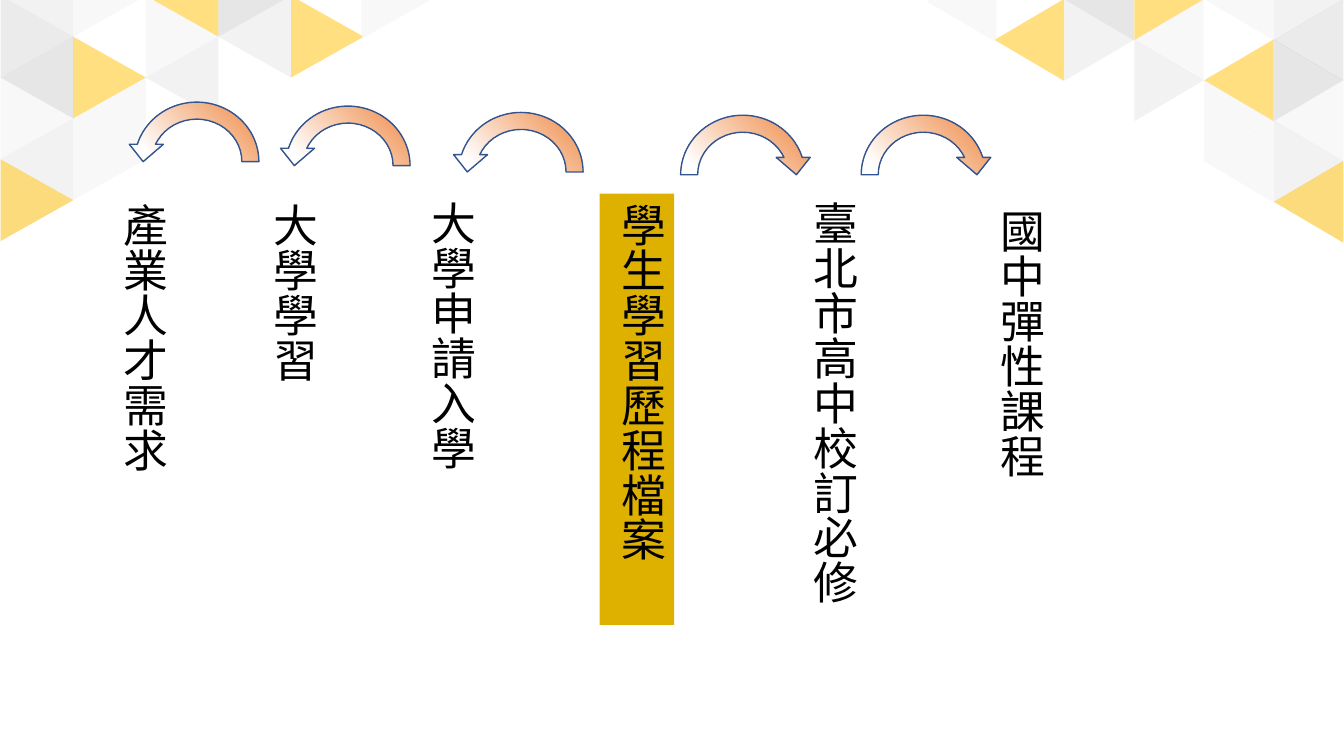
from lxml import etree
from pptx import Presentation
from pptx import util as u
from pptx.dml.color import RGBColor
from pptx.enum import shapes, text
from pptx.oxml import parse_xml
from pptx.oxml.ns import qn

Cm = u.Cm
FONT = "Noto Sans CJK SC"
NS = "http://schemas.openxmlformats.org/drawingml/2006/main"

# Vertical labels: text, left, top, height (cm), fill
LABEL_WIDTH = 1.88
LABELS = [
    ("產業人才需求", 2.57, 4.88, 7.65, None),
    ("大學學習", 6.35, 4.88, 7.98, None),
    ("大學申請入學", 10.31, 4.83, 7.98, None),
    ("學生學習歷程檔案", 15.11, 4.88, 10.87, "DEB000"),
    ("臺北市高中校訂必修", 19.96, 4.83, 11.53, None),
    ("國中彈性課程", 24.66, 5.03, 11.53, None),
]

# Curved arrows: left, top (cm), points left
ARROW_SIZE = (3.56, 3.43)
ARROWS = [
    (3.18, 2.36, True),
    (6.99, 2.46, True),
    (11.35, 2.62, True),
    (16.94, 2.69, False),
    (21.49, 2.69, False),
]
ARROW_STOPS = [(0, "FFFFFF"), (35, "FFFFFF"), (100, "ED7D31")]

# Triangle mosaic: one row per half step down, columns from the slide edge inwards
MOSAIC = [
    ["E7E6E6", "F2F2F2", "FFC000", "D0CECE"],
    ["D9D9D9", "FFFFFF", "F2F2F2", "E7E6E6", "FFC000"],
    ["D0CECE", "FFC000", "E7E6E6"],
    ["F2F2F2", "F2F2F2"],
    ["E7E6E6", "F2F2F2"],
    ["F2F2F2"],
    ]
TILES = [(c, r, color, (c + r) % 2) for r, row in enumerate(MOSAIC)
         for c, color in enumerate(row)]
TILES += [(0, 5, "FFC000", 1), (4.97, 0.05, "F2F2F2", 1)]
# Corners: first left, column step, first top, row step, triangle height, inward angle
TILE_WIDTH = 2.06
CORNERS = [
    (31.95, -1.76, -0.89, 1.02, 1.75, 270),
    (-0.1, 1.83, -1.02, 1.03, 1.83, 90),
]


def rgb(color):
    return RGBColor.from_string(color)


def add_preset(parent, kind, left, top, width, height, fill):
    s = parent.add_shape(kind, Cm(left), Cm(top), Cm(width), Cm(height))
    s.shadow.inherit = False
    s.fill.solid()
    s.fill.fore_color.rgb = rgb(fill)
    s.line.fill.background()
    return s


def add_tile(group, left, top, height, color, angle):
    s = add_preset(group, shapes.MSO_SHAPE.ISOSCELES_TRIANGLE,
                   left, top, TILE_WIDTH, height, color)
    s.rotation = angle
    clr = s._element.spPr.find(qn("a:solidFill"))[0]
    etree.SubElement(clr, qn("a:alpha")).set("val", "50000")


def add_arrow(parent, left, top, to_left):
    s = add_preset(parent, shapes.MSO_SHAPE.CIRCULAR_ARROW, left, top, *ARROW_SIZE, "FFFFFF")
    s.line.color.rgb = rgb("325491")
    s.line.width = u.Pt(1)
    spPr = s._element.spPr
    if to_left:
        spPr.find(qn("a:xfrm")).set("flipH", "1")
    stops = "".join(f'<a:gs pos="{pos * 1000}"><a:srgbClr val="{color}"/></a:gs>'
                    for pos, color in ARROW_STOPS)
    gradient = parse_xml(
        f'<a:gradFill xmlns:a="{NS}" rotWithShape="0"><a:gsLst>{stops}</a:gsLst>'
        '<a:path path="circle"><a:fillToRect t="100000" r="100000"/></a:path></a:gradFill>')
    spPr.replace(spPr.find(qn("a:solidFill")), gradient)


def add_label(parent, label, left, top, height, fill):
    if fill:
        s = add_preset(parent, shapes.MSO_SHAPE.RECTANGLE, left, top, LABEL_WIDTH, height, fill)
    else:
        s = parent.add_textbox(Cm(left), Cm(top), Cm(LABEL_WIDTH), Cm(height))
    tf = s.text_frame
    tf.text = label
    tf.word_wrap = True
    tf.auto_size = text.MSO_AUTO_SIZE.SHAPE_TO_FIT_TEXT
    tf.vertical_anchor = text.MSO_ANCHOR.TOP
    tf._txBody.bodyPr.set("vert", "eaVert")
    p = tf.paragraphs[0]
    p.alignment = text.PP_ALIGN.LEFT
    r = p.runs[0]
    r.font.size = u.Pt(32)
    r.font.name = FONT
    r.font.color.rgb = rgb("000000")
    etree.SubElement(r.font._element, qn("a:ea")).set("typeface", FONT)


def main():
    prs = Presentation()
    prs.slide_width, prs.slide_height = Cm(33.87), Cm(19.05)
    sp = prs.slides.add_slide(prs.slide_layouts[6]).shapes

    # Corner mosaics
    for x0, dx, y0, dy, height, inward in CORNERS:
        group = sp.add_group_shape().shapes
        for c, r, color, points_in in TILES:
            angle = inward if points_in else 360 - inward
            add_tile(group, x0 + c * dx, y0 + r * dy, height, color, angle)

    # Labels and the arrows between them
    for label in LABELS:
        add_label(sp, *label)
    for arrow in ARROWS:
        add_arrow(sp, *arrow)

    prs.save("out.pptx")


if __name__ == "__main__":
    main()
